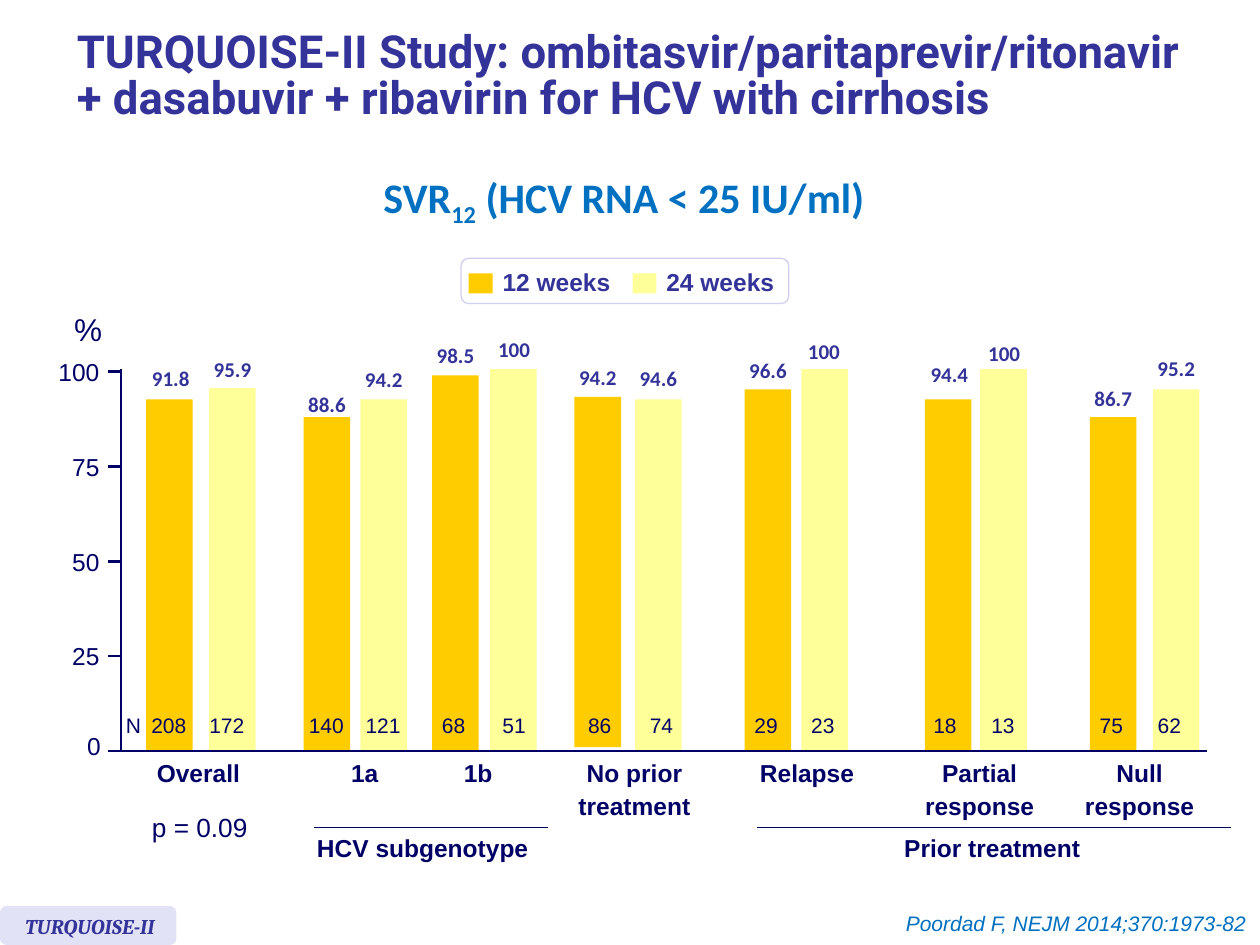
from dataclasses import dataclass
from lxml import etree
from pptx import Presentation
from pptx.dml.color import RGBColor
from pptx.enum.shapes import MSO_CONNECTOR, MSO_SHAPE
from pptx.enum.text import MSO_ANCHOR, MSO_AUTO_SIZE, PP_ALIGN
from pptx.oxml.ns import qn
from pptx.util import Pt

LEFT, MID, RIGHT = PP_ALIGN.LEFT, PP_ALIGN.CENTER, PP_ALIGN.RIGHT
TOP, CENTER = MSO_ANCHOR.TOP, MSO_ANCHOR.MIDDLE
GROW, FIXED = MSO_AUTO_SIZE.SHAPE_TO_FIT_TEXT, MSO_AUTO_SIZE.NONE
RECT, ROUND = MSO_SHAPE.RECTANGLE, MSO_SHAPE.ROUNDED_RECTANGLE
LINE = MSO_CONNECTOR.STRAIGHT

PX = 9144
BASE = 596
BAR = 37
COLORS = {
    "navy": "000066", "indigo": "333399", "blue": "0070C0",
    "gold": "FFCC00", "yellow": "FFFF99", "lilac": "E2E2F6",
    "edge": "D0D0F0", "white": "FFFFFF",
}


@dataclass(frozen=True)
class Style:
    size: int
    color: str
    font: str = "Arial"
    bold: bool = False
    italic: bool = False


@dataclass(frozen=True)
class Bar:
    x: int
    top: int
    value: str
    left: int
    over: int
    count: str
    mid: int
    base: int = BASE


@dataclass(frozen=True)
class Label:
    x: int
    y: int
    w: int
    h: int
    lines: tuple
    ratio: float = 1.0


@dataclass(frozen=True)
class Rule:
    x1: int
    y1: int
    x2: int
    y2: int
    width: float = 1.5


TITLE = Style(26, "indigo", "Roboto", True)
HEAD = Style(24, "blue", "Calibri", True)
KEY = Style(14, "indigo", bold=True)
VALUE = Style(12, "indigo", "Calibri", True)
COUNT = Style(12, "navy")
AXIS = Style(14, "navy")
GROUP = Style(14, "navy", bold=True)
TAG = Style(12, "indigo", "Cambria", True, True)
CITE = Style(12, "blue", italic=True)

WEEKS_12 = [
    Bar(116, 317, "91.8", 110, 280, "208", 134),
    Bar(241, 331, "88.6", 234, 301, "140", 259),
    Bar(343, 298, "98.5", 336, 262, "68", 360),
    Bar(456, 315, "94.2", 449, 279, "86", 476, 593),
    Bar(591, 309, "96.6", 584, 274, "29", 608),
    Bar(734, 317, "94.4", 728, 277, "18", 750),
    Bar(865, 331, "86.7", 858, 296, "75", 882),
]
WEEKS_24 = [
    Bar(166, 308, "95.9", 159, 273, "172", 180),
    Bar(286, 317, "94.2", 279, 281, "121", 304),
    Bar(389, 293, "100", 385, 257, "51", 408),
    Bar(504, 317, "94.6", 497, 280, "74", 525),
    Bar(636, 293, "100", 631, 259, "23", 653),
    Bar(778, 293, "100", 774, 260, "13", 796),
    Bar(915, 309, "95.2", 908, 272, "62", 928),
]
LABELS = [
    Label(114, 597, 87, 34, ("Overall",)),
    Label(268, 597, 43, 34, ("1a",)),
    Label(358, 597, 43, 34, ("1b",)),
    Label(449, 597, 109, 58, ("No prior", "treatment")),
    Label(593, 597, 95, 34, ("Relapse",)),
    Label(724, 597, 107, 58, ("Partial", "response")),
    Label(851, 597, 107, 58, ("Null", "response")),
    Label(241, 659, 189, 31, ("HCV subgenotype",), 0.9),
    Label(707, 659, 161, 31, ("Prior treatment",), 0.9),
]
RULES = [
    Rule(96, 293, 96, BASE), Rule(86, BASE, 958, BASE),
    Rule(249, 657, 435, 657, 0.75), Rule(601, 657, 977, 657, 0.75),
]


def px(n: float) -> int:
    return round(n * PX)


def tint(name: str) -> RGBColor:
    return RGBColor.from_string(COLORS[name])


def write(para, words: str, style: Style):
    run = para.add_run()
    run.text = words
    font = run.font
    font.name, font.size = style.font, Pt(style.size)
    font.bold, font.italic = style.bold, style.italic
    font.color.rgb = tint(style.color)
    return run


def text(slide, x: float, y: float, w: int, h: int, lines: tuple, style: Style,
         align=LEFT, pad: tuple = (10, 5), anchor=TOP, wrap: bool = False,
         ratio: float = 1.0):
    box = slide.shapes.add_textbox(px(x), px(y), px(w), px(h))
    frame = box.text_frame
    frame.word_wrap, frame.auto_size = wrap, GROW
    frame.vertical_anchor = anchor
    frame.margin_left = frame.margin_right = px(pad[0])
    frame.margin_top = frame.margin_bottom = px(pad[1])
    for i, line in enumerate(lines):
        para = frame.add_paragraph() if i else frame.paragraphs[0]
        para.alignment = align
        para.line_spacing = ratio
        if i:
            para.space_before = Pt(1.6)
        write(para, line, style)
    return frame.paragraphs[0]


def block(slide, kind, x: int, y: int, w: int, h: int, fill: str, edge: str = "") -> None:
    shape = slide.shapes.add_shape(kind, px(x), px(y), px(w), px(h))
    shape.shadow.inherit = False
    shape.fill.solid()
    shape.fill.fore_color.rgb = tint(fill)
    if edge:
        shape.line.color.rgb = tint(edge)
        shape.line.width = Pt(0.75)
    else:
        shape.line.fill.background()


def stroke(slide, rule: Rule) -> None:
    line = slide.shapes.add_connector(
        LINE, px(rule.x1), px(rule.y1), px(rule.x2), px(rule.y2))
    line.line.color.rgb = tint(rule.color if hasattr(rule, "color") else "navy")
    line.line.width = Pt(rule.width)
    etree.SubElement(line._element.spPr, qn("a:effectLst"))


def head(slide) -> None:
    title = slide.shapes.title
    title.left, title.top, title.width, title.height = px(51), px(8), px(949), px(107)
    frame = title.text_frame
    frame.word_wrap, frame.auto_size = True, FIXED
    frame.vertical_anchor = CENTER
    para = frame.paragraphs[0]
    para.alignment, para.line_spacing = LEFT, 0.85
    write(para, "TURQUOISE-II Study: ombitasvir/paritaprevir/ritonavir", TITLE)
    para.add_line_break()
    write(para, "+ dasabuvir + ribavirin for HCV with cirrhosis", TITLE)
    para = text(slide, 288, 131, 422, 50, ("SVR",), HEAD, MID)
    sub = write(para, "12", HEAD)
    sub._r.get_or_add_rPr().set("baseline", "-25000")
    write(para, " (HCV RNA < 25 IU/ml) ", HEAD)


def legend(slide) -> None:
    block(slide, ROUND, 366, 205, 260, 36, "white", "edge")
    for x, fill, name in ((372, "gold", "12 weeks"), (502, "yellow", "24 weeks")):
        block(slide, RECT, x, 217, 19, 16, fill)
        text(slide, x + 17, 207, 106, 34, (name,), KEY)


def plot(slide) -> None:
    for fill, bars in (("gold", WEEKS_12), ("yellow", WEEKS_24)):
        for bar in bars:
            block(slide, RECT, bar.x, bar.top, BAR, bar.base - bar.top, fill)
            wide = 46 if bar.value == "100" else 51
            text(slide, bar.left, bar.over, wide, 40, (bar.value,), VALUE, MID, (10, 10))
            text(slide, bar.mid - 24, 561, 48, 30, (bar.count,), COUNT, MID)
    text(slide, 90, 561, 32, 30, ("N",), COUNT)
    for rule in RULES:
        stroke(slide, rule)
    for mark in (25, 50, 75, 100):
        y = BASE - 3.01 * mark
        stroke(slide, Rule(86, y, 96, y))
        text(slide, 46, y - 12, 33, 24, (str(mark),), AXIS, RIGHT, (0, 0), CENTER)
    text(slide, 69, 580, 11, 24, ("0",), AXIS, RIGHT, (0, 0), CENTER)
    text(slide, 49, 241, 42, 40, ("%",), Style(18, "navy"))
    for label in LABELS:
        text(slide, label.x, label.y, label.w, label.h, label.lines, GROUP, MID,
             ratio=label.ratio)
    text(slide, 110, 642, 97, 33, ("p = 0.09",), Style(15, "navy"), MID, ratio=0.9)


def foot(slide) -> None:
    block(slide, ROUND, 0, 719, 140, 31, "lilac")
    text(slide, 10, 720, 152, 30, ("TURQUOISE-II",), TAG, wrap=True)
    text(slide, 548, 718, 451, 30, ("Poordad F, NEJM 2014;370:1973-82",), CITE,
         RIGHT, wrap=True)


def main() -> None:
    deck = Presentation()
    deck.slide_width, deck.slide_height = px(1000), px(750)
    slide = deck.slides.add_slide(deck.slide_layouts[5])
    head(slide)
    legend(slide)
    plot(slide)
    foot(slide)
    deck.save("out.pptx")


if __name__ == "__main__":
    main()
